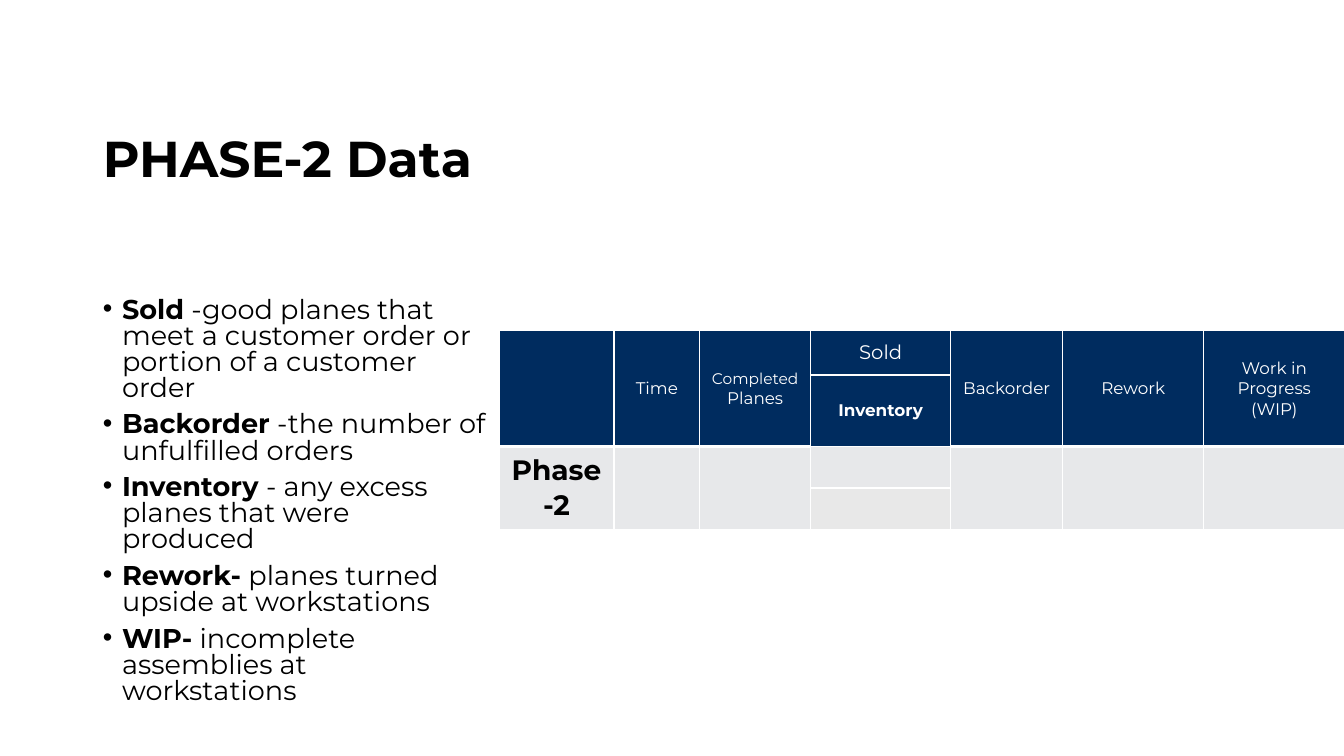
from dataclasses import dataclass

from lxml.etree import SubElement
from pptx import Presentation
from pptx.dml.color import RGBColor as Rgb
from pptx.enum.text import MSO_ANCHOR as Anchor, MSO_AUTO_SIZE as AutoSize, PP_ALIGN as Align
from pptx.oxml import parse_xml
from pptx.oxml.ns import nsdecls, qn
from pptx.util import Inches, Pt


@dataclass(frozen=True)
class Theme:
    """Colours, font and type sizes of the slide."""
    font: str = "Montserrat"
    ink: str = "000000"
    paper: str = "FFFFFF"
    header: str = "002C5F"
    band: str = "E7E8EA"
    band_alt: str = "E8E8E8"
    title: float = 36
    body: float = 19.4
    phase: float = 20
    label_large: float = 14
    label: float = 12
    label_small: float = 11


THEME = Theme()
WIDTH, HEIGHT = 13.33, 7.5
LEFT, SPLIT = 0.92, 4.95
DEFINITIONS = [
    ("Sold", " -good planes that meet a customer order or portion of a customer order"),
    ("Backorder", " -the number of unfulfilled orders"),
    ("Inventory", " - any excess planes that were produced"),
    ("Rework-", " planes turned upside at workstations"),
    ("WIP-", " incomplete assemblies at workstations"),
]
COLUMNS = [1.14, 0.85, 1.1, 1.39, 1.11, 1.4, 1.4]
ROWS = [0.44, 0.71, 0.41, 0.41]
SPLIT_COLUMN = 3
HEADINGS = {
    1: [("Time", THEME.label)],
    2: [("Completed", THEME.label_small), (" Planes", THEME.label)],
    3: [("Sold", THEME.label_large)],
    4: [("Backorder", THEME.label)],
    5: [("Rework", THEME.label)],
    6: [("Work in Progress (WIP)", THEME.label)],
}


def write(paragraph, text, size=THEME.body, color=THEME.ink, bold=False):
    """Append a formatted run to a paragraph."""
    run = paragraph.add_run()
    run.text = text
    run.font.name = THEME.font
    run.font.size = Pt(size)
    run.font.bold = bold
    run.font.color.rgb = Rgb.from_string(color)


def place(placeholder, box, anchor):
    """Move a placeholder into a box and return its text frame."""
    placeholder.left, placeholder.top, placeholder.width, placeholder.height = map(Inches, box)
    frame = placeholder.text_frame
    frame.word_wrap = True
    frame.auto_size = AutoSize.NONE
    frame.vertical_anchor = anchor
    return frame


def add_title(placeholder, box):
    """Fill the slide title."""
    heading = place(placeholder, box, Anchor.MIDDLE).paragraphs[0]
    heading.alignment = Align.LEFT
    heading.line_spacing = 0.9
    write(heading, "PHASE-2 Data", size=THEME.title, bold=True)


def add_definitions(placeholder, box):
    """List the terms with their meanings as bullets."""
    frame = place(placeholder, box, Anchor.TOP)
    for index, (term, meaning) in enumerate(DEFINITIONS):
        entry = frame.add_paragraph() if index else frame.paragraphs[0]
        entry.line_spacing = 0.8
        entry.space_before = Pt(7.5 if index else 0)
        properties = entry._p.get_or_add_pPr()
        properties.set("marL", str(Inches(0.19)))
        properties.set("indent", str(Inches(-0.19)))
        SubElement(properties, qn("a:buChar"), char="•")
        write(entry, term, bold=True)
        write(entry, meaning)


def outline(cell, bottom):
    """Draw the four borders of a cell."""
    properties = cell._tc.get_or_add_tcPr()
    for index, side in enumerate("LRTB"):
        weight = Pt(bottom if side == "B" else 1)
        properties.insert(index, parse_xml(
            f'<a:ln{side} {nsdecls("a")} w="{weight}"><a:solidFill>'
            f'<a:srgbClr val="{THEME.paper}"/></a:solidFill></a:ln{side}>'))


def fill_cell(cell, parts, **style):
    """Write centred text parts into a cell."""
    cell.vertical_anchor = Anchor.MIDDLE
    paragraph = cell.text_frame.paragraphs[0]
    paragraph.alignment = Align.CENTER
    for text, size in parts:
        write(paragraph, text, size=size, **style)


def add_phase_table(slide, left, top):
    """Build the phase table, with every column but one merged in row pairs."""
    frame = slide.shapes.add_table(len(ROWS), len(COLUMNS), Inches(left), Inches(top),
                                   Inches(sum(COLUMNS)), Inches(sum(ROWS)))
    table = frame.table
    table.first_row = table.horz_banding = False
    for column, width in zip(table.columns, COLUMNS):
        column.width = Inches(width)
    for row, height in zip(table.rows, ROWS):
        row.height = Inches(height)
    fills = [THEME.header, THEME.header, THEME.band, THEME.band_alt]
    for row, color in enumerate(fills):
        for column in range(len(COLUMNS)):
            cell = table.cell(row, column)
            cell.fill.solid()
            cell.fill.fore_color.rgb = Rgb.from_string(color)
            merged_header = row < 2 and column != SPLIT_COLUMN
            outline(cell, bottom=3 if merged_header else 1)
            if row % 2 and column != SPLIT_COLUMN:
                table.cell(row - 1, column).merge(cell)
    for column, parts in HEADINGS.items():
        fill_cell(table.cell(0, column), parts, color=THEME.paper)
    fill_cell(table.cell(1, SPLIT_COLUMN), [("Inventory", THEME.label)],
              color=THEME.paper, bold=True)
    fill_cell(table.cell(2, 0), [("Phase-2", THEME.phase)], bold=True)


def main():
    """Build and save the slide."""
    deck = Presentation()
    deck.slide_width, deck.slide_height = Inches(WIDTH), Inches(HEIGHT)
    slide = deck.slides.add_slide(deck.slide_layouts[1])
    title, body = slide.placeholders
    add_title(title, (LEFT, 0.87, 11.5, 1.45))
    add_definitions(body, (LEFT, 2.91, SPLIT - LEFT, 3.85))
    add_phase_table(slide, SPLIT, 3.28)
    deck.save("out.pptx")


if __name__ == "__main__":
    main()
